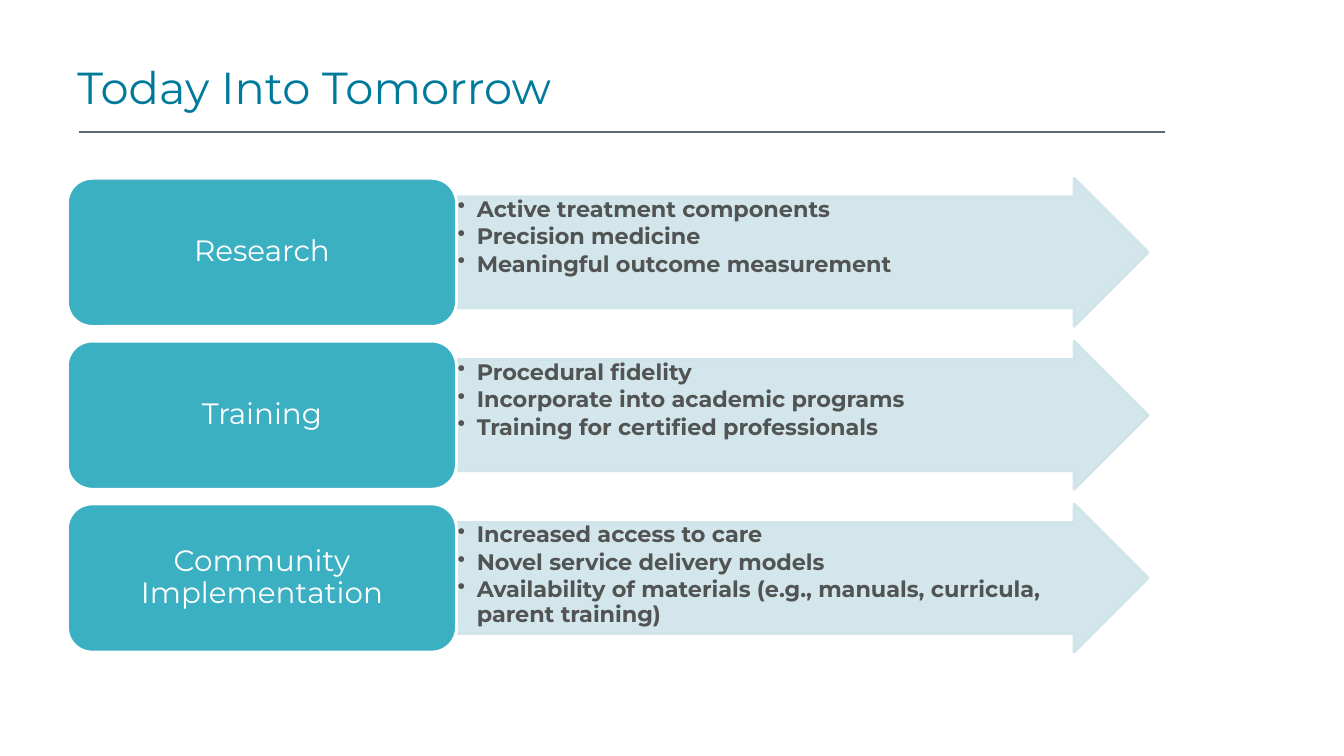
from lxml import etree
from pptx import Presentation
from pptx import util as u
from pptx.dml.color import RGBColor
from pptx.enum import shapes, text
from pptx.oxml.ns import qn

Pt = u.Pt
COLORS = {"title": "007A9B", "rule": "5F6972", "arrow": "CEE4E9",
          "label": "3BB0C2", "white": "FFFFFF", "body": "525353"}
TITLE = {"size": Pt(32), "bold": False, "name": "Montserrat"}
LABEL = {"size": Pt(21), "bold": False, "name": "Montserrat"}
BULLET = {"size": Pt(16), "bold": True, "name": "Montserrat"}
LABEL_W = 277.9
ROW_H = 105.8
ROW_PITCH = 116.3
ROWS = [
    ("Research", 0, ["Active treatment components", "Precision medicine",
                     "Meaningful outcome measurement"]),
    ("Training", 83.5, ["Procedural fidelity", "Incorporate into academic programs",
                        "Training for certified professionals"]),
    ("Community Implementation", 83.5,
     ["Increased access to care", "Novel service delivery models",
      "Availability of materials (e.g., manuals, curricula, parent training)"]),
]


def rgb(key):
    return RGBColor.from_string(COLORS[key])


def write(p, words, fmt, color, spacing):
    p.line_spacing = spacing
    r = p.add_run()
    r.text = words
    for name, value in fmt.items():
        setattr(r.font, name, value)
    r.font.color.rgb = rgb(color)


def set_frame(tf, anchor, left, top, right, bottom):
    values = {"word_wrap": True, "vertical_anchor": anchor,
              "margin_left": Pt(left), "margin_top": Pt(top),
              "margin_right": Pt(right), "margin_bottom": Pt(bottom)}
    for name, value in values.items():
        setattr(tf, name, value)


def add_block(s, kind, box, fill, line):
    sp = s.shapes.add_shape(kind, *map(Pt, box))
    sp.shadow.inherit = False
    sp.fill.solid()
    sp.fill.fore_color.rgb = rgb(fill)
    sp.line.color.rgb = rgb(line)
    sp.line.width = Pt(2)
    return sp


def add_bullet(p):
    pPr = p._p.get_or_add_pPr()
    pPr.set("marL", str(Pt(13.7)))
    pPr.set("indent", str(-Pt(13.7)))
    etree.SubElement(pPr, qn("a:buChar")).set("char", "•")


def add_header(s, x, y, w, h):
    sp = s.shapes.add_textbox(Pt(x), Pt(y), Pt(w), Pt(h))
    set_frame(sp.text_frame, text.MSO_ANCHOR.TOP, 7.2, 3.6, 7.2, 3.6)
    write(sp.text_frame.paragraphs[0], "Today Into Tomorrow", TITLE, "title", Pt(40))
    rule_y = Pt(y + h + 8.6)
    rule = s.shapes.add_connector(shapes.MSO_CONNECTOR.STRAIGHT,
                                  Pt(x + 8), rule_y, Pt(x + 784), rule_y)
    rule.line.color.rgb = rgb("rule")
    rule.line.width = Pt(1.5)
    etree.SubElement(rule._element.spPr, qn("a:effectLst"))


def add_arrow(s, x, y, w, h, overlap, bullets):
    box = (x - overlap, y, w + overlap, h)
    sp = add_block(s, shapes.MSO_SHAPE.RIGHT_ARROW, box, "arrow", "arrow")
    sp.adjustments[0] = 0.75
    sp.adjustments[1] = 0.5
    for clr in sp._element.spPr.iter(qn("a:srgbClr")):
        etree.SubElement(clr, qn("a:alpha")).set("val", "90000")
    tf = sp.text_frame
    set_frame(tf, text.MSO_ANCHOR.TOP, overlap + 0.8, 0.8, 17, 0.8)
    for i, words in enumerate(bullets):
        p = tf.add_paragraph() if i else tf.paragraphs[0]
        add_bullet(p)
        p.alignment = text.PP_ALIGN.LEFT
        p.space_after = Pt(2.4)
        write(p, words, BULLET, "body", 0.9)


def add_label(s, x, y, w, h, words):
    sp = add_block(s, shapes.MSO_SHAPE.ROUNDED_RECTANGLE, (x, y, w, h), "label", "white")
    set_frame(sp.text_frame, text.MSO_ANCHOR.MIDDLE, 6.5, 3.2, 6.5, 3.2)
    p = sp.text_frame.paragraphs[0]
    p.alignment = text.PP_ALIGN.CENTER
    write(p, words, LABEL, "white", 0.9)


def add_rows(s, x, y, w):
    for i, (label, overlap, bullets) in enumerate(ROWS):
        top = y + i * ROW_PITCH
        add_arrow(s, x + LABEL_W, top, w - LABEL_W, ROW_H, overlap, bullets)
        add_label(s, x, top, LABEL_W, ROW_H, label)


def main():
    prs = Presentation()
    prs.slide_width, prs.slide_height = Pt(960), Pt(540)
    s = prs.slides.add_slide(prs.slide_layouts[6])
    add_header(s, 48.2, 37.4, 656, 48.2)
    add_rows(s, 48.2, 127.4, 771.9)
    prs.save("out.pptx")


if __name__ == "__main__":
    main()
